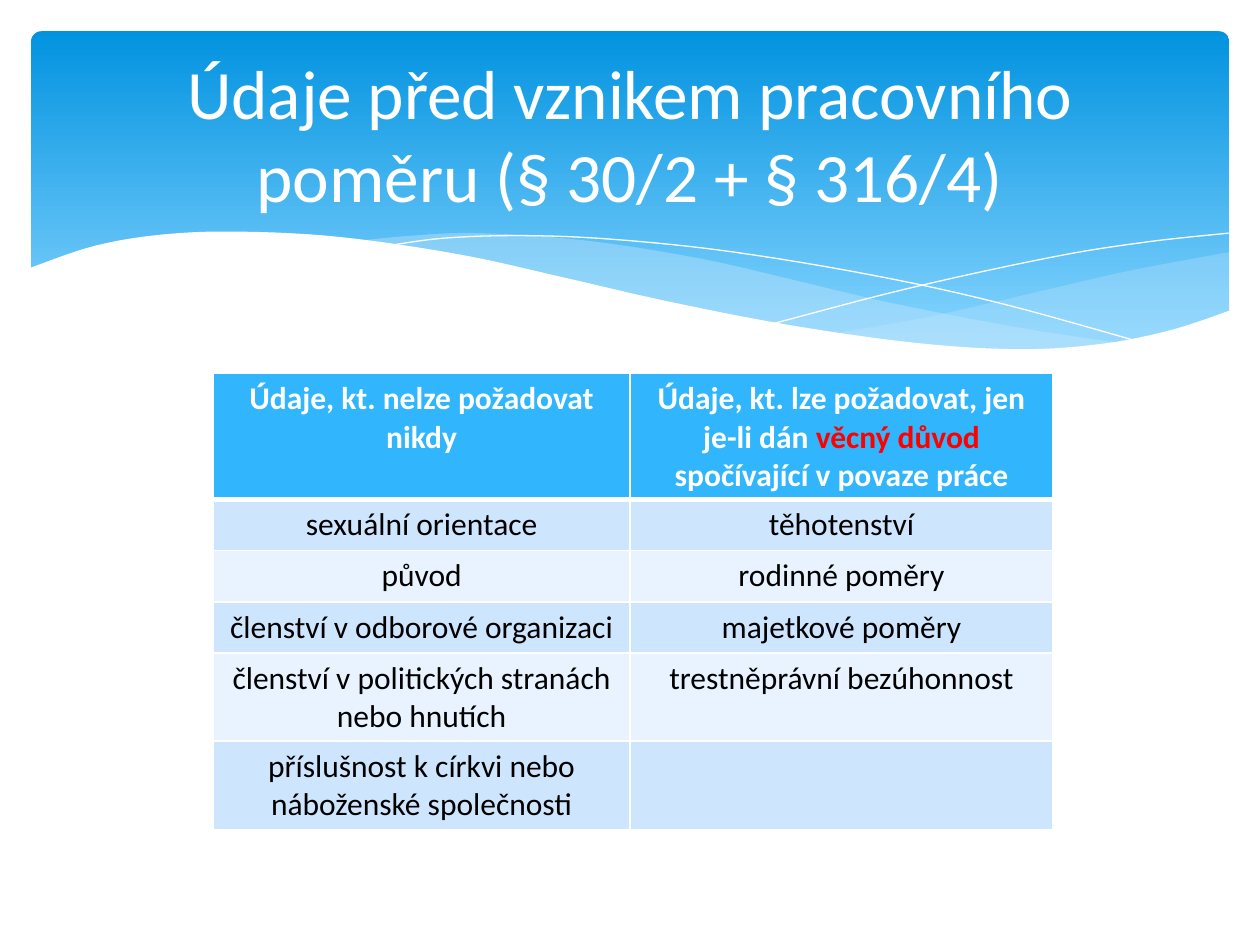
from dataclasses import dataclass

import pptx
import pptx.dml.color
import pptx.enum.shapes
import pptx.enum.text
import pptx.oxml
import pptx.oxml.ns
import pptx.util

Cm = pptx.util.Cm
Pt = pptx.util.Pt
RGBColor = pptx.dml.color.RGBColor
Point = tuple[float, float]

FONT = "Calibri"
WHITE = RGBColor(0xFF, 0xFF, 0xFF)
BLACK = RGBColor(0, 0, 0)
RED = RGBColor(0xFF, 0, 0)
SKY_TOP = RGBColor(0x02, 0x93, 0xE0)
SKY_BOTTOM = RGBColor(0x83, 0xD3, 0xFE)
MIST = RGBColor(0xC6, 0xE7, 0xFC)
HEADER = RGBColor(0x31, 0xB6, 0xFD)
BANDS = (RGBColor(0xCE, 0xE5, 0xFE), RGBColor(0xE8, 0xF3, 0xFF))


@dataclass(frozen=True)
class Wave:
    """Smooth curves joined into one outline, with lengths in centimetres."""

    curves: tuple[tuple[Point, ...], ...]
    fill: RGBColor | None = None
    opacity: int = 100


@dataclass(frozen=True)
class Span:
    """A piece of text in one style."""

    text: str
    color: RGBColor = BLACK
    bold: bool = False
    size: float = 18


WAVES = (
    Wave((((24.79, 5.08), (23.01, 5.41), (21.87, 5.66), (19.79, 6.15), (18.52, 6.43), (16.79, 6.73)),
          ((16.79, 6.73), (18.59, 6.96), (20.4, 7.06), (21.92, 6.99), (23.39, 6.73), (24.79, 6.27))),
         MIST, 29),
    Wave((((22.68, 6.93), (20.5, 6.6), (17.93, 6.1), (15.98, 5.64), (14.1, 5.21), (11.81, 4.85),
           (9.65, 4.7), (8.33, 4.75), (7.26, 4.85)),
          ((7.26, 4.85), (9.19, 5.16), (11.4, 5.64), (13.46, 6.1), (15.7, 6.55), (17.65, 6.86),
           (19.33, 7.04), (20.78, 7.06), (22.68, 6.93))),
         MIST, 40),
    Wave((((7.85, 4.95), (8.97, 4.8), (10.57, 4.75), (12.42, 4.83), (14.78, 5.08), (17.65, 5.56),
           (20.19, 6.12), (23.04, 6.91)),)),
    Wave((((15.57, 6.53), (18.29, 5.82), (21.23, 5.18), (23.11, 4.88), (24.77, 4.7)),)),
    Wave((((24.82, 6.25), (23.62, 6.65), (22.22, 6.93), (20.55, 7.04), (18.44, 6.91), (15.9, 6.55),
           (13.44, 6.07), (11.35, 5.59), (9.27, 5.13), (6.88, 4.78), (4.9, 4.67), (3.35, 4.72),
           (1.93, 4.95), (0.58, 5.41)),
          ((0.58, 8.36), (24.82, 8.36))),
         WHITE),
)

TITLE = Span("Údaje před vznikem pracovního poměru (§ 30/2 + § 316/4)", WHITE, size=39.6)
HEADINGS = (
    (Span("Údaje, kt. nelze požadovat nikdy", WHITE, True),),
    (Span("Údaje, kt. lze požadovat, jen je-li dán ", WHITE, True),
     Span("věcný důvod ", RED, True),
     Span("spočívající v povaze práce", WHITE, True)),
)
BODY = (
    ("sexuální orientace", "těhotenství"),
    ("původ", "rodinné poměry"),
    ("členství v odborové organizaci", "majetkové poměry"),
    ("členství v politických stranách nebo hnutích", "trestněprávní bezúhonnost"),
    ("příslušnost k církvi nebo náboženské společnosti", ""),
)
COLUMN_WIDTHS = (8.4, 8.53)
ROW_HEIGHT = 1.03


def smooth(points: tuple[Point, ...], steps: int = 6) -> list[Point]:
    """Sample a Catmull-Rom curve through the points."""
    if len(points) < 3:
        return list(points)
    padded = (points[0], *points, points[-1])
    samples = [points[0]]
    for a, b, c, d in zip(padded, padded[1:], padded[2:], padded[3:]):
        for step in range(1, steps + 1):
            t = step / steps
            samples.append(tuple(
                (2 * q + (r - p) * t + (2 * p - 5 * q + 4 * r - s) * t**2
                 + (3 * q - p - 3 * r + s) * t**3) / 2
                for p, q, r, s in zip(a, b, c, d)))
    return samples


def draw_wave(page, wave: Wave) -> None:
    """Draw a filled wave, or a white hairline when it has no fill."""
    outline = [(Cm(x), Cm(y)) for curve in wave.curves for x, y in smooth(curve)]
    builder = page.shapes.build_freeform(*outline[0])
    builder.add_line_segments(outline[1:], close=wave.fill is not None)
    shape = builder.convert_to_shape()
    shape.shadow.inherit = False
    if wave.fill is None:
        shape.fill.background()
        shape.line.color.rgb = WHITE
        shape.line.width = Pt(0)
        return
    shape.line.fill.background()
    shape.fill.solid()
    shape.fill.fore_color.rgb = wave.fill
    if wave.opacity < 100:
        color = shape.fill._xPr.find(".//" + pptx.oxml.ns.qn("a:srgbClr"))
        color.append(pptx.oxml.parse_xml(
            f'<a:alpha {pptx.oxml.ns.nsdecls("a")} val="{wave.opacity * 1000}"/>'))


def draw_banner(page) -> None:
    """Draw the rounded gradient panel behind the title."""
    banner = page.shapes.add_shape(
        pptx.enum.shapes.MSO_SHAPE.ROUNDED_RECTANGLE, Cm(0.63), Cm(0.63), Cm(24.15), Cm(6.86))
    banner.adjustments[0] = 0.03
    banner.shadow.inherit = False
    banner.line.fill.background()
    banner.fill.gradient()
    banner.fill.gradient_angle = 270
    for stop, color, position in zip(banner.fill.gradient_stops, (SKY_TOP, SKY_BOTTOM), (0, 0.9)):
        stop.color.rgb = color
        stop.position = position


def write(frame, spans: tuple[Span, ...]) -> None:
    """Write one centred paragraph, run by run."""
    para = frame.paragraphs[0]
    para.alignment = pptx.enum.text.PP_ALIGN.CENTER
    for span in spans:
        run = para.add_run()
        run.text = span.text
        run.font.name = FONT
        run.font.size = Pt(span.size)
        run.font.bold = span.bold
        run.font.color.rgb = span.color


def draw_title(page) -> None:
    """Place the title on the banner."""
    box = page.shapes.add_textbox(Cm(1.27), Cm(0.94), Cm(22.86), Cm(3.48))
    box.text_frame.word_wrap = True
    box.text_frame.vertical_anchor = pptx.enum.text.MSO_ANCHOR.MIDDLE
    write(box.text_frame, (TITLE,))


def style_cell(cell, fill: RGBColor, bottom: int) -> None:
    """Fill a cell and give it white borders, the bottom one in the given points."""
    cell.fill.solid()
    cell.fill.fore_color.rgb = fill
    properties = cell._tc.get_or_add_tcPr()
    for index, (side, width) in enumerate((("L", 1), ("R", 1), ("T", 1), ("B", bottom))):
        properties.insert(index, pptx.oxml.parse_xml(
            f'<a:ln{side} {pptx.oxml.ns.nsdecls("a")} w="{Pt(width)}">'
            f'<a:solidFill><a:srgbClr val="{WHITE}"/></a:solidFill></a:ln{side}>'))


def draw_table(page) -> None:
    """Draw the two-column table of personal data."""
    rows = [HEADINGS]
    rows += [tuple((Span(text),) if text else () for text in texts) for texts in BODY]
    frame = page.shapes.add_table(
        len(rows), len(COLUMN_WIDTHS), Cm(4.3), Cm(7.53), Cm(sum(COLUMN_WIDTHS)), Cm(9.93))
    table = frame.table
    for column, width in zip(table.columns, COLUMN_WIDTHS):
        column.width = Cm(width)
    for number, row in enumerate(rows):
        table.rows[number].height = Cm(ROW_HEIGHT)
        fill = BANDS[(number - 1) % 2] if number else HEADER
        for cell, spans in zip(table.rows[number].cells, row):
            style_cell(cell, fill, 1 if number else 3)
            write(cell.text_frame, spans)
    frame.height = Cm(9.93)


def main() -> None:
    """Build the slide and save it."""
    deck = pptx.Presentation()
    deck.slide_width, deck.slide_height = Cm(25.4), Cm(19.05)
    page = deck.slides.add_slide(deck.slide_layouts[6])
    draw_banner(page)
    for wave in WAVES:
        draw_wave(page, wave)
    draw_title(page)
    draw_table(page)
    deck.save("out.pptx")


if __name__ == "__main__":
    main()
